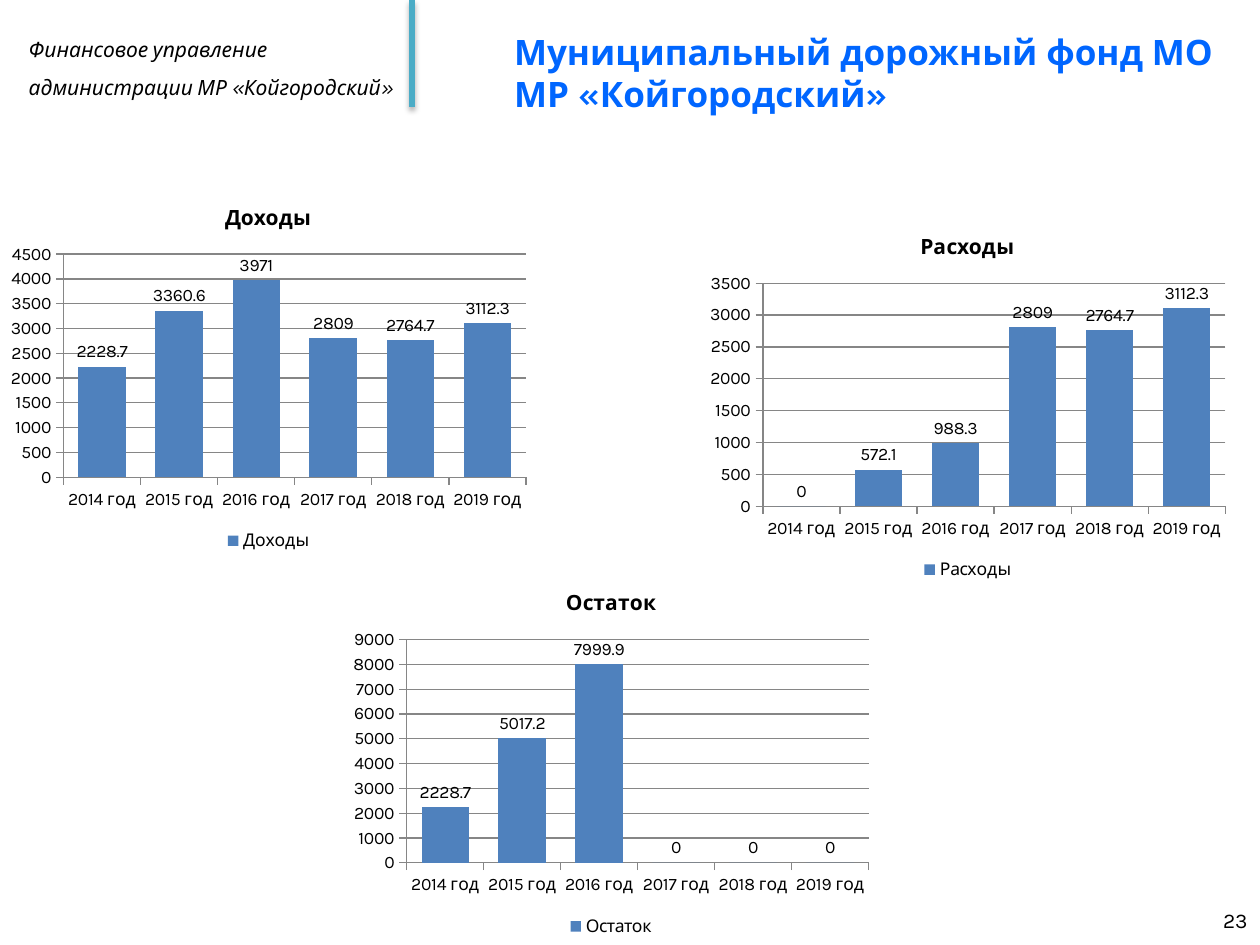
from lxml.etree import SubElement
from pptx import Presentation
from pptx.chart.data import CategoryChartData
from pptx.dml.color import RGBColor
from pptx.enum.chart import XL_CHART_TYPE, XL_LABEL_POSITION, XL_LEGEND_POSITION, XL_TICK_MARK
from pptx.enum.shapes import MSO_CONNECTOR
from pptx.enum.text import MSO_ANCHOR, PP_ALIGN
from pptx.oxml.ns import qn
from pptx.util import Inches, Pt

BLACK = RGBColor(0x00, 0x00, 0x00)
TITLE_BLUE = RGBColor(0x00, 0x66, 0xFF)
DIVIDER_TEAL = RGBColor(0x4B, 0xAC, 0xC6)
BAR_BLUE = RGBColor(0x4F, 0x81, 0xBD)
AXIS_GRAY = RGBColor(0x86, 0x86, 0x86)
FONT = "Karla"

TITLE = "Муниципальный дорожный фонд МО МР «Койгородский»"
DEPARTMENT = ["Финансовое управление", "администрации МР «Койгородский»"]
PAGE_NUMBER = "23"
YEARS = [f"{year} год" for year in range(2014, 2020)]
CHART_SIZE = (4.26, 2.94)
CHARTS = [
    ("Доходы", (0, 1.47), (2228.7, 3360.6, 3971, 2809, 2764.7, 3112.3)),
    ("Расходы", (5.55, 1.7), (0, 572.1, 988.3, 2809, 2764.7, 3112.3)),
    ("Остаток", (2.72, 4.53), (2228.7, 5017.2, 7999.9, 0, 0, 0)),
]


def format_font(font, size, color=BLACK, **styles):
    font.color.rgb = color
    for name, value in {"name": FONT, "size": Pt(size), **styles}.items():
        setattr(font, name, value)


def write_text(shape, lines, size, color=BLACK, paragraph_format=None, **styles):
    frame = shape.text_frame
    frame.word_wrap = True
    frame.text = "\n".join(lines)
    for paragraph in frame.paragraphs:
        for name, value in (paragraph_format or {}).items():
            setattr(paragraph, name, value)
        for run in paragraph.runs:
            format_font(run.font, size, color, **styles)


def add_divider(slide):
    divider = slide.shapes.add_connector(
        MSO_CONNECTOR.STRAIGHT, Inches(3.27), Inches(0), Inches(3.27), Inches(0.85))
    divider.line.color.rgb = DIVIDER_TEAL
    divider.line.width = Pt(3)
    effects = SubElement(divider._element.spPr, qn("a:effectLst"))
    shadow = SubElement(effects, qn("a:outerShdw"), blurRad=str(Pt(3.1)),
                        dist=str(Pt(1.8)), dir="5400000", rotWithShape="0")
    color = SubElement(shadow, qn("a:srgbClr"), val=str(BLACK))
    SubElement(color, qn("a:alpha"), val="35000")


def add_column_chart(slide, name, position, values):
    data = CategoryChartData()
    data.categories = YEARS
    data.add_series(name, values)
    box = [Inches(length) for length in (*position, *CHART_SIZE)]
    chart = slide.shapes.add_chart(XL_CHART_TYPE.COLUMN_CLUSTERED, *box, data).chart
    format_font(chart.font, 10)

    chart.has_title = True
    title_frame = chart.chart_title.text_frame
    title_frame.text = name
    format_font(title_frame.paragraphs[0].runs[0].font, 12, bold=True)

    chart.has_legend = True
    chart.legend.position = XL_LEGEND_POSITION.BOTTOM
    chart.legend.include_in_layout = False

    chart.value_axis.has_major_gridlines = True
    chart.value_axis.major_gridlines.format.line.color.rgb = AXIS_GRAY
    for axis in (chart.category_axis, chart.value_axis):
        axis.major_tick_mark = XL_TICK_MARK.OUTSIDE
        axis.format.line.color.rgb = AXIS_GRAY

    plot = chart.plots[0]
    plot.gap_width = 62
    plot.vary_by_categories = False
    plot.has_data_labels = True
    plot.data_labels.show_value = True
    plot.data_labels.position = XL_LABEL_POSITION.OUTSIDE_END
    fill = plot.series[0].format.fill
    fill.solid()
    fill.fore_color.rgb = BAR_BLUE


def place(shape, left, top, width, height):
    for name, value in zip(("left", "top", "width", "height"), (left, top, width, height)):
        setattr(shape, name, Inches(value))


def main():
    presentation = Presentation()
    presentation.slide_width, presentation.slide_height = Inches(10), Inches(7.5)
    slide = presentation.slides.add_slide(presentation.slide_layouts[5])

    title = slide.shapes.title
    place(title, 3.98, 0, 6.02, 1.15)
    write_text(title, [TITLE], 20, TITLE_BLUE, {"alignment": PP_ALIGN.LEFT}, bold=True)
    title.text_frame.vertical_anchor = MSO_ANCHOR.MIDDLE

    department = slide.shapes.add_textbox(
        Inches(0.13), Inches(0.14), Inches(3.14), Inches(0.71))
    write_text(department, DEPARTMENT, 12, paragraph_format={"line_spacing": 1.5}, italic=True)

    add_divider(slide)
    for name, position, values in CHARTS:
        add_column_chart(slide, name, position, values)

    number = slide.shapes.add_textbox(Inches(7.67), Inches(7.1), Inches(2.33), Inches(0.4))
    write_text(number, [PAGE_NUMBER], 12, paragraph_format={"alignment": PP_ALIGN.RIGHT})
    number.text_frame.vertical_anchor = MSO_ANCHOR.MIDDLE

    presentation.save("out.pptx")


if __name__ == "__main__":
    main()
